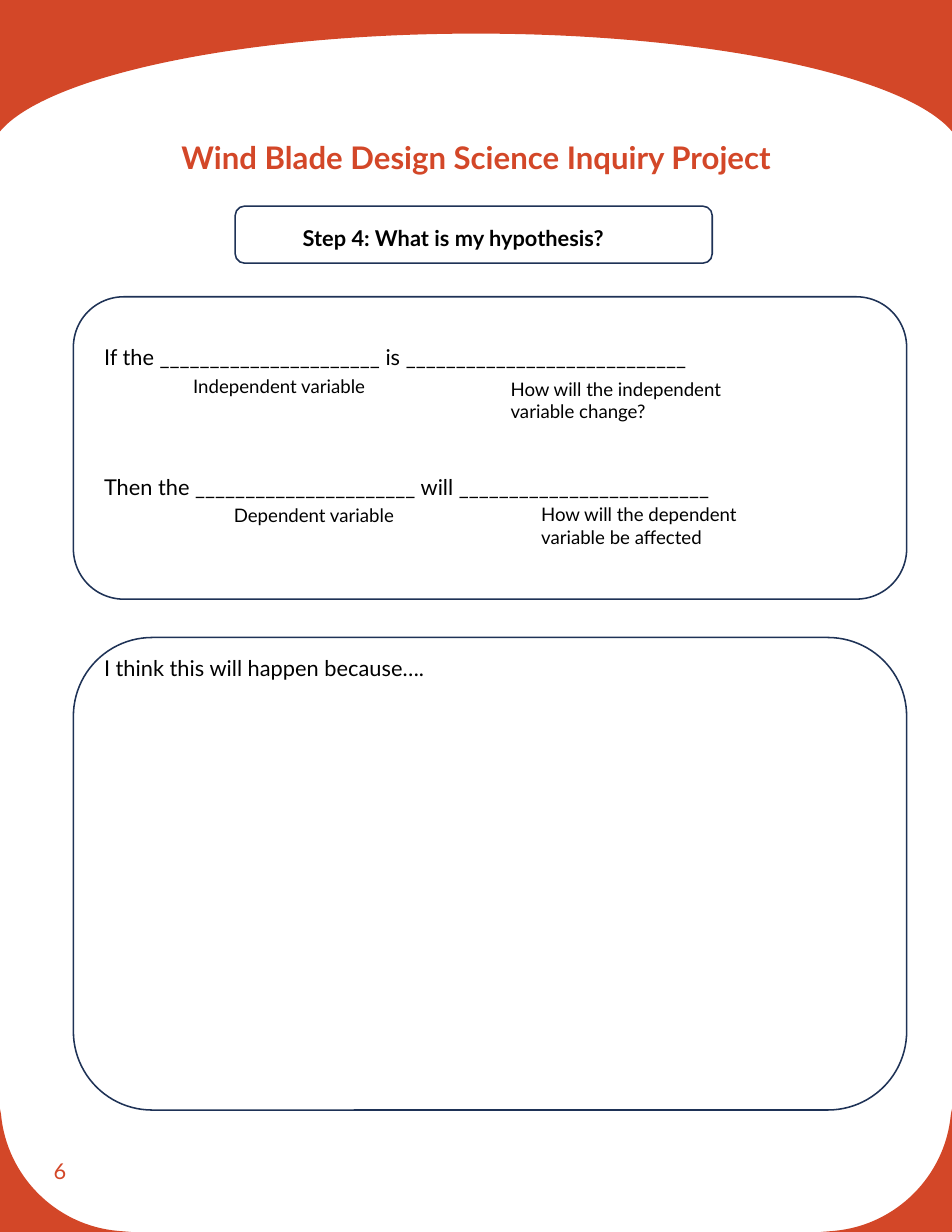
import pptx
import pptx.util
import pptx.dml.color
import pptx.enum.shapes
import pptx.enum.text
import pptx.oxml
import pptx.oxml.ns

Pt = pptx.util.Pt
RGB = pptx.dml.color.RGBColor.from_string
qn = pptx.oxml.ns.qn
ALIGN = pptx.enum.text.PP_ALIGN
ANCHOR = pptx.enum.text.MSO_ANCHOR
COLORS = {"orange": "D34728", "navy": "1E3256", "black": "000000"}
W, H = 612, 792

prs = pptx.Presentation()
prs.slide_width, prs.slide_height = Pt(W), Pt(H)
s = prs.slides.add_slide(prs.slide_layouts[6])


def add_outline(start, segments):
    """Draw a filled outline; a segment is one point (line) or three (curve)."""
    fb = s.shapes.build_freeform(Pt(start[0]), Pt(start[1]), scale=1.0)
    fb.add_line_segments([(Pt(x), Pt(y)) for seg in segments for x, y in seg])
    sp = fb.convert_to_shape()
    sp.shadow.inherit = False
    sp.fill.solid()
    sp.fill.fore_color.rgb = RGB(COLORS["orange"])
    sp.line.fill.background()
    lines = iter(list(sp._element.iter(qn("a:lnTo"))))
    for seg in segments:
        parts = [next(lines) for _ in seg]
        if len(parts) == 3:
            curve = pptx.oxml.parse_xml(
                f'<a:cubicBezTo {pptx.oxml.ns.nsdecls("a")}/>')
            parts[0].addprevious(curve)
            for part in parts:
                curve.append(part[0])
                part.getparent().remove(part)


def add_text(x, y, w, h, lines, size, color="black", bold=False, gap=0):
    """Add a text box; gap is the space between its paragraphs."""
    tf = s.shapes.add_textbox(Pt(x), Pt(y), Pt(w), Pt(h)).text_frame
    tf.word_wrap = True
    for i, line in enumerate(lines):
        p = tf.paragraphs[0] if i == 0 else tf.add_paragraph()
        p.text = line
        p.font.size, p.font.name, p.font.bold = Pt(size), "Lato", bold
        p.font.color.rgb = RGB(COLORS[color])
        if i:
            p.space_before = Pt(gap)
    return tf


# Page border: arched top and two rounded bottom corners
add_outline((0, 0), [
    [(W, 0)], [(W, 84.5)],
    [(582.5, 49), (456, 21.6), (W / 2, 21.6)],
    [(156, 21.6), (29.5, 49), (0, 84.5)],
    [(0, 0)]])
corner = [[(0.7, 716.4)],
          [(4.3, 756), (36, 787.7), (75.6, 791.3)],
          [(84.2, H)], [(0, H)], [(0, 712.8)]]
add_outline((0, 712.8), corner)
add_outline((W, 712.8), [[(W - x, y) for x, y in seg] for seg in corner])

# Frames: explanation, hypothesis, step heading
for x, y, w, h in ((47.2, 409.8, 535.7, 303.8),
                   (47.2, 190.8, 535.7, 194.4),
                   (151.2, 132.5, 306.7, 36.7)):
    sp = s.shapes.add_shape(pptx.enum.shapes.MSO_SHAPE.ROUNDED_RECTANGLE,
                            Pt(x), Pt(y), Pt(w), Pt(h))
    sp.shadow.inherit = False
    sp.fill.background()
    sp.line.color.rgb = RGB(COLORS["navy"])
    sp.line.width = Pt(1)

tf = add_text(27.4, 731.5, 137.5, 42.5, ["6"], 14, "orange")
tf.vertical_anchor = ANCHOR.MIDDLE

tf = add_text(25.7, 78.5, 560.9, 61.9,
              ["Wind Blade Design Science Inquiry Project"], 20, "orange", True)
tf.paragraphs[0].alignment = ALIGN.CENTER
tf.paragraphs[0].line_spacing = 1.3

add_text(187.5, 141.1, 297.4, 24.5, ["Step 4: What is my hypothesis?"], 14, bold=True)
add_text(59.8, 217.4, 522.7, 126.7,
         ["If the ______________________ is ____________________________",
          "Then the ______________________ will _________________________"],
         14, gap=66.8)
add_text(59.8, 417.3, 522.7, 55.4, ["I think this will happen because…."], 14)

# Hints under the blanks
for x, y, h, hint in (
        (117.1, 237.6, 21.6, "Independent variable"),
        (321.2, 239.4, 36, "How will the independent variable change?"),
        (143.3, 320.4, 21.6, "Dependent variable"),
        (340.8, 319.9, 36, "How will the dependent variable be affected")):
    add_text(x, y, 163.4, h, [hint], 12)

prs.save("out.pptx")
